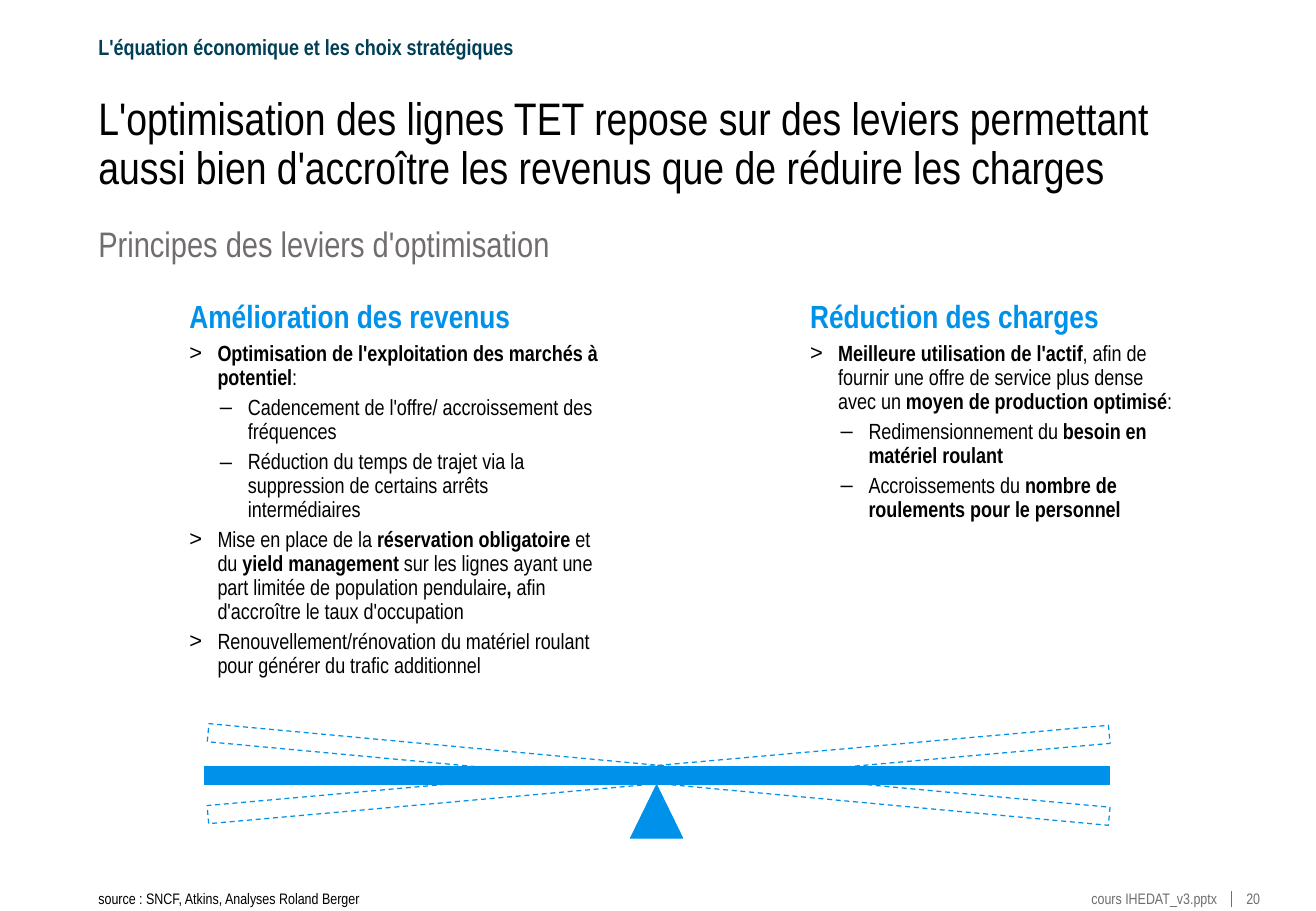
from dataclasses import dataclass

from lxml import etree
from pptx import Presentation
from pptx.dml.color import RGBColor
from pptx.enum import dml, shapes, text
from pptx.oxml import ns
from pptx.util import Pt


@dataclass(frozen=True)
class Theme:
    font: str = "Arial Narrow"
    bullet_font: str = "Arial"
    black: str = "000000"
    grey: str = "716D6D"
    blue: str = "0091EA"
    navy: str = "003F56"
    title: int = 27
    subtitle: int = 21
    heading: int = 19
    body: int = 13
    footer: int = 9


@dataclass(frozen=True)
class Box:
    x: float
    y: float
    w: float
    h: float

    def emu(self):
        return [Pt(v) for v in (self.x, self.y, self.w, self.h)]


THEME = Theme()
LEFT = text.PP_ALIGN.LEFT
RIGHT = text.PP_ALIGN.RIGHT
BULLETS = {1: (">", 16.6), 2: ("–", 34.6)}
HANGING = 16.6

REVENUES = [
    (1, "*Optimisation de l'exploitation des marchés à potentiel*:"),
    (2, "Cadencement de l'offre/ accroissement des fréquences"),
    (2, "Réduction du temps de trajet via la suppression de certains arrêts intermédiaires"),
    (1, "Mise en place de la *réservation obligatoire* et du *yield management *sur les lignes "
        "ayant une part limitée de population pendulaire*, *afin d'accroître le taux d'occupation"),
    (1, "Renouvellement/rénovation du matériel roulant pour générer du trafic additionnel"),
]
COSTS = [
    (1, "*Meilleure utilisation de l'actif*, afin de fournir une offre de service plus dense "
        "avec un *moyen de production optimisé*:"),
    (2, "Redimensionnement du *besoin en matériel roulant*"),
    (2, "Accroissements du *nombre de roulements pour le personnel*"),
]


def add_frame(s, box, wrap=True, inset=(0, 0)):
    tf = s.shapes.add_textbox(*box.emu()).text_frame
    tf.word_wrap = wrap
    tf.margin_left, tf.margin_right = Pt(inset[0]), Pt(inset[1])
    tf.margin_top = tf.margin_bottom = 0
    return tf


def add_runs(p, marked, size, color):
    p.line_spacing = 0.9
    for i, part in enumerate(marked.split("*")):
        if part:
            r = p.add_run()
            r.text = part
            r.font.name = THEME.font
            r.font.size = Pt(size)
            r.font.bold = i % 2 == 1
            r.font.color.rgb = RGBColor.from_string(color)


def add_label(s, box, marked, size, color, wrap=True, align=LEFT):
    p = add_frame(s, box, wrap).paragraphs[0]
    p.alignment = align
    add_runs(p, marked, size, color)


def add_bullet(p, level):
    char, margin = BULLETS[level]
    pPr = p._p.get_or_add_pPr()
    pPr.set("marL", str(Pt(margin)))
    pPr.set("indent", str(-Pt(HANGING)))
    pPr.set("lvl", str(level))
    etree.SubElement(pPr, ns.qn("a:buFont"), typeface=THEME.bullet_font)
    etree.SubElement(pPr, ns.qn("a:buChar"), char=char)


def add_header(s, box):
    add_label(s, Box(box.x, box.y, 248, 14.4),
              "*L'équation économique et les choix stratégiques*", THEME.body, THEME.navy, False)
    add_label(s, Box(box.x, box.y + 35.3, box.w, 59),
              "L'optimisation des lignes TET repose sur des leviers permettant "
              "aussi bien d'accroître les revenus que de réduire les charges",
              THEME.title, THEME.black)
    add_label(s, Box(box.x, box.y + 113, box.w, 23),
              "Principes des leviers d'optimisation", THEME.subtitle, THEME.grey)


def add_levers(s, box, heading, items):
    tf = add_frame(s, box, inset=(11.5, 8.6))
    add_runs(tf.paragraphs[0], f"*{heading}*", THEME.heading, THEME.blue)
    for level, marked in items:
        p = tf.add_paragraph()
        add_bullet(p, level)
        p.space_before = Pt(4)
        add_runs(p, marked, THEME.body, THEME.black)


def add_part(s, kind, box, filled=True, rotation=0):
    sp = s.shapes.add_shape(kind, *box.emu())
    sp.shadow.inherit = False
    sp.rotation = rotation
    blue = RGBColor.from_string(THEME.blue)
    sp.line.color.rgb = blue
    if filled:
        sp.fill.solid()
        sp.fill.fore_color.rgb = blue
        sp.line.width = Pt(0.5)
    else:
        sp.fill.background()
        sp.line.width = Pt(0.75)
        sp.line.dash_style = dml.MSO_LINE.DASH


def add_seesaw(s, box):
    beam = 10.8
    pivot_w = 31
    tilted = Box(box.x + 1.2, box.y - 0.6, box.w, beam)
    rect = shapes.MSO_SHAPE.RECTANGLE
    for rotation in (5.3, 354.9):
        add_part(s, rect, tilted, False, rotation)
    add_part(s, rect, Box(box.x, box.y, box.w, beam))
    add_part(s, shapes.MSO_SHAPE.ISOSCELES_TRIANGLE,
             Box(box.x + (box.w - pivot_w) / 2, box.y + beam, pivot_w, box.h - beam))


def add_footer(s, box):
    add_label(s, Box(box.x, box.y, 157.7, box.h),
              "source : SNCF, Atkins, Analyses Roland Berger", THEME.footer, THEME.black, False)
    right = box.x + box.w
    add_label(s, Box(right - 103, box.y, 76.3, box.h),
              "cours IHEDAT_v3.pptx", THEME.footer, THEME.grey, False, RIGHT)
    add_label(s, Box(right - 9.4, box.y, 9.4, box.h), "20", THEME.footer, THEME.grey, False)
    x = Pt(right - 18)
    line = s.shapes.add_connector(shapes.MSO_CONNECTOR.STRAIGHT,
                                  x, Pt(box.y), x, Pt(box.y + 9.4))
    line.line.color.rgb = RGBColor.from_string(THEME.grey)
    line.line.width = Pt(0.75)
    etree.SubElement(line._element.spPr, ns.qn("a:effectLst"))


def main():
    prs = Presentation()
    prs.slide_width, prs.slide_height = Pt(780), Pt(540)
    s = prs.slides.add_slide(prs.slide_layouts[6])
    add_header(s, Box(58.3, 21.6, 672.5, 136))
    add_levers(s, Box(100.8, 178.6, 265, 225.4), "Amélioration des revenus", REVENUES)
    add_levers(s, Box(468.7, 178.6, 234.7, 131.8), "Réduction des charges", COSTS)
    add_seesaw(s, Box(121, 454.3, 536.4, 42.5))
    add_footer(s, Box(58.3, 528.4, 689.8, 10))
    prs.save("out.pptx")


if __name__ == "__main__":
    main()
